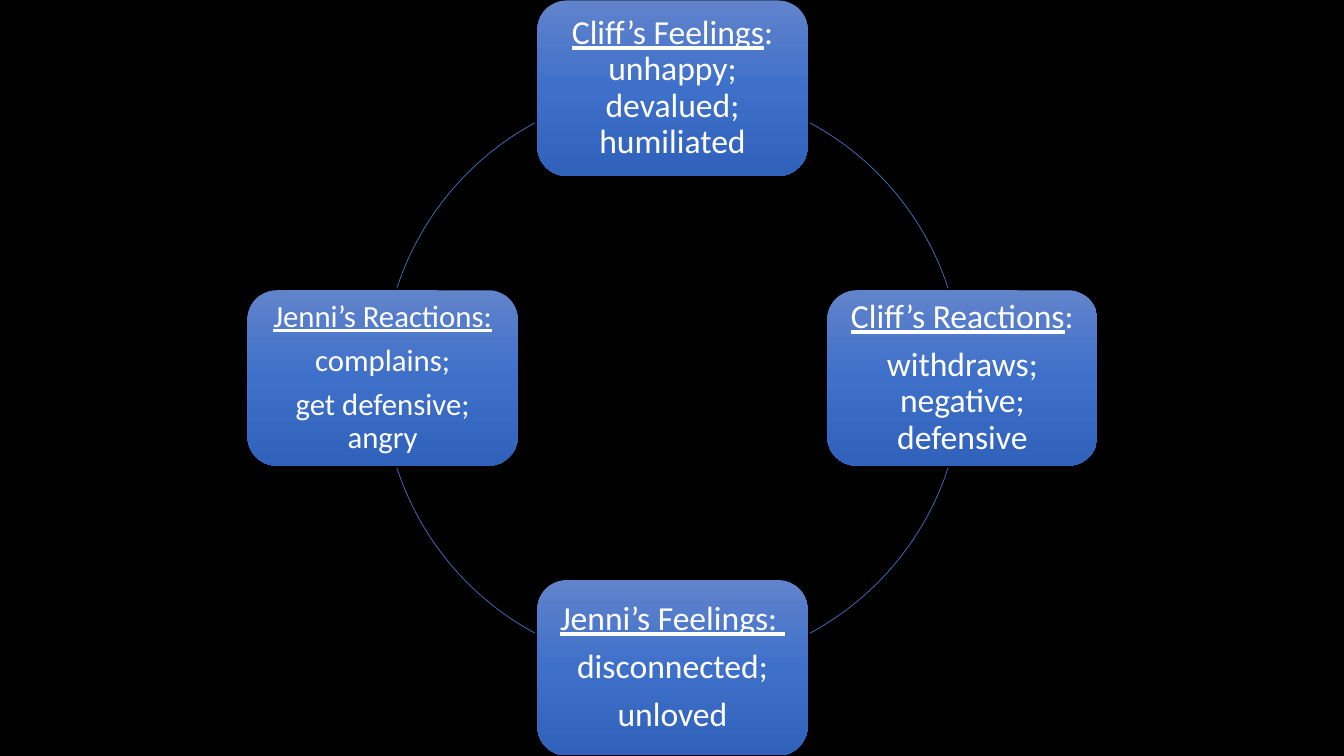
from copy import deepcopy
from dataclasses import dataclass
from math import cos, radians, sin

from pptx import Presentation
from pptx.dml.color import RGBColor
from pptx.enum import shapes, text
from pptx.oxml.ns import qn
from pptx.util import Inches, Pt


@dataclass(frozen=True)
class Theme:
    font: str = "Calibri"
    size: int = 24
    small_size: int = 22
    background: RGBColor = RGBColor.from_string("000000")
    text: RGBColor = RGBColor.from_string("FFFFFF")
    ring: RGBColor = RGBColor.from_string("4472C4")
    gradient: tuple = ("6183CB", "3E70CA", "3062BB")


THEME = Theme()
SLIDE_W, SLIDE_H = 13.33, 7.5
CENTER_X, CENTER_Y, RADIUS = 6.67, 3.75, 2.875
BOX_W, BOX_H = 2.68, 1.74
ARC_START, ARC_END = 28.3, 72  # degrees past the box that an arc leaves

# Clockwise from the top; each paragraph is (underlined, plain)
STAGES = [
    (THEME.size, [("Cliff’s Feelings", ": unhappy; devalued; humiliated")]),
    (THEME.size, [("Cliff’s Reactions", ":"),
                  ("", "withdraws; negative; defensive")]),
    (THEME.size, [("Jenni’s Feelings: ", ""), ("", "disconnected;"),
                  ("", "unloved")]),
    (THEME.small_size, [("Jenni’s Reactions:", ""), ("", "complains;"),
                        ("", "get defensive; angry")]),
]


def fill_gradient(sp):
    """Fill a shape from top to bottom with evenly spaced theme colours."""
    sp.fill.gradient()
    sp.fill.gradient_angle = 270
    stops = sp._element.spPr.find(qn("a:gradFill")).find(qn("a:gsLst"))
    stops.insert(1, deepcopy(stops[0]))
    last = len(THEME.gradient) - 1
    for i, (stop, color) in enumerate(zip(sp.fill.gradient_stops, THEME.gradient)):
        stop.color.rgb = RGBColor.from_string(color)
        stop.position = i / last


def add_run(p, words, size, underline):
    r = p.add_run()
    r.text = words
    r.font.name = THEME.font
    r.font.size = Pt(size)
    r.font.color.rgb = THEME.text
    r.font.underline = underline


def write_stage(tf, size, paragraphs):
    tf.word_wrap = True
    tf.vertical_anchor = text.MSO_ANCHOR.MIDDLE
    tf.margin_left = tf.margin_right = Inches(0.1)
    tf.margin_top = tf.margin_bottom = Inches(0.1)
    for i, parts in enumerate(paragraphs):
        p = tf.add_paragraph() if i else tf.paragraphs[0]
        p.alignment = text.PP_ALIGN.CENTER
        p.line_spacing = 0.9
        p.space_after = Pt(0.35 * size)
        for words, underline in zip(parts, (True, False)):
            if words:
                add_run(p, words, size, underline)


def add_stage(s, angle, size, paragraphs):
    """Add a box centred on the ring, at an angle clockwise from the right."""
    x = CENTER_X + RADIUS * cos(radians(angle))
    y = CENTER_Y + RADIUS * sin(radians(angle))
    sp = s.shapes.add_shape(
        shapes.MSO_SHAPE.ROUNDED_RECTANGLE, Inches(x - BOX_W / 2),
        Inches(y - BOX_H / 2), Inches(BOX_W), Inches(BOX_H))
    sp.shadow.inherit = False
    sp.line.fill.background()
    fill_gradient(sp)
    write_stage(sp.text_frame, size, paragraphs)


def add_ring_arc(s, start, end):
    sp = s.shapes.add_shape(
        shapes.MSO_SHAPE.ARC, Inches(CENTER_X - RADIUS),
        Inches(CENTER_Y - RADIUS), Inches(2 * RADIUS), Inches(2 * RADIUS))
    # An adjustment of 0.6 is one degree
    for i, angle in enumerate((start, end)):
        sp.adjustments[i] = angle % 360 * 0.6
    sp.shadow.inherit = False
    sp.fill.background()
    sp.line.color.rgb = THEME.ring
    sp.line.width = Pt(0.5)


def main():
    prs = Presentation()
    prs.slide_width, prs.slide_height = Inches(SLIDE_W), Inches(SLIDE_H)
    s = prs.slides.add_slide(prs.slide_layouts[6])
    s.background.fill.solid()
    s.background.fill.fore_color.rgb = THEME.background

    step = 360 / len(STAGES)
    for i, (size, paragraphs) in enumerate(STAGES):
        angle = 270 + i * step
        add_stage(s, angle, size, paragraphs)
        # The arcs on the left mirror those on the right
        start, end = (ARC_START, ARC_END) if i % 2 == 0 else (
            step - ARC_END, step - ARC_START)
        add_ring_arc(s, angle + start, angle + end)
    prs.save("out.pptx")


if __name__ == "__main__":
    main()
